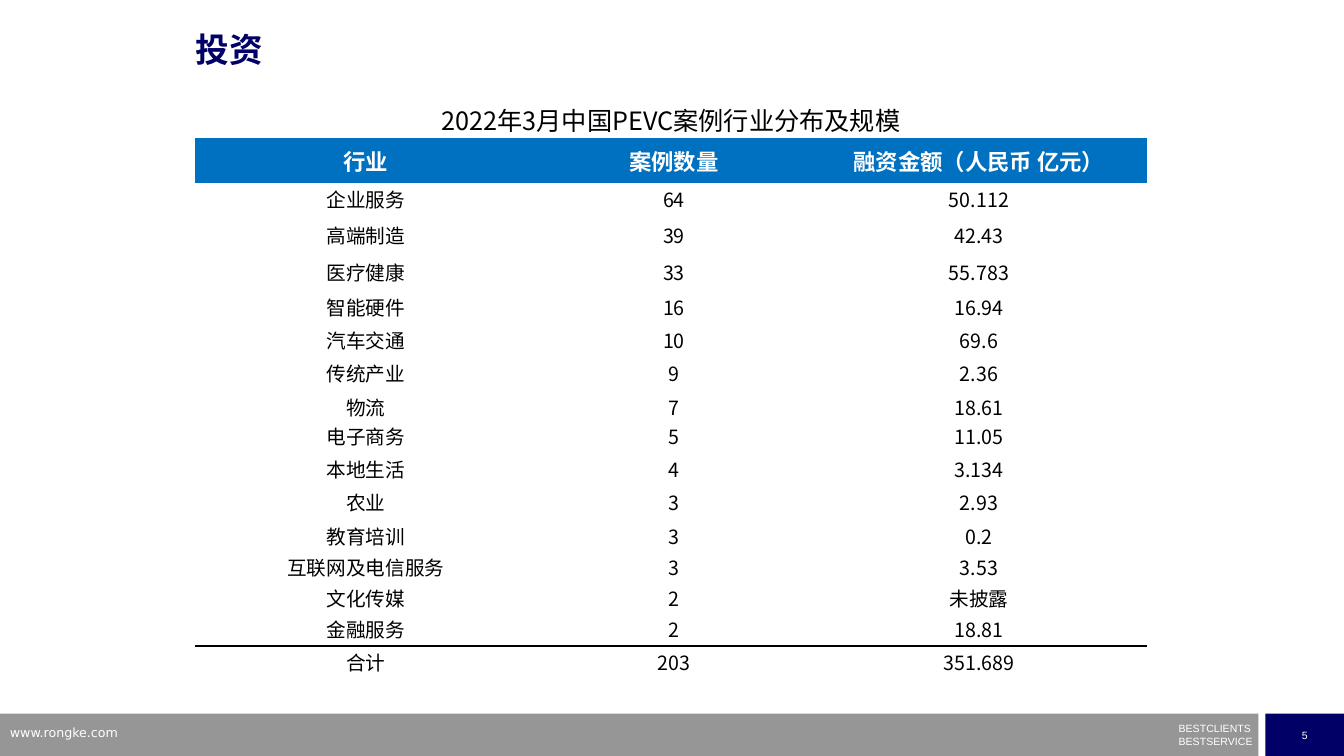
import pptx
import pptx.dml.color
import pptx.enum.shapes
import pptx.enum.text
import pptx.oxml
import pptx.oxml.ns
import pptx.util

Inches = pptx.util.Inches
Pt = pptx.util.Pt
Align = pptx.enum.text.PP_ALIGN
Anchor = pptx.enum.text.MSO_ANCHOR

ROWS = [
    ("企业服务", "64", "50.112"),
    ("高端制造", "39", "42.43"),
    ("医疗健康", "33", "55.783"),
    ("智能硬件", "16", "16.94"),
    ("汽车交通", "10", "69.6"),
    ("传统产业", "9", "2.36"),
    ("物流", "7", "18.61"),
    ("电子商务", "5", "11.05"),
    ("本地生活", "4", "3.134"),
    ("农业", "3", "2.93"),
    ("教育培训", "3", "0.2"),
    ("互联网及电信服务", "3", "3.53"),
    ("文化传媒", "2", "未披露"),
    ("金融服务", "2", "18.81"),
    ("合计", "203", "351.689"),
]
HEADS = ("行业", "案例数量", "融资金额（人民币 亿元）")
WIDTHS = (3.4, 2.71, 3.34)
HEIGHTS = [0.37, 0.45] + [0.36] * 3 + [0.33] * 3 + [0.29] + [0.33] * 3 + [0.31] * 5
LINE = 0.29


def color(text):
    return pptx.dml.color.RGBColor.from_string(text)


class Page:
    """Holds the style and the current slide, and draws each kind of element."""

    main = "Noto Sans CJK SC"
    navy, gray, blue = "000066", "969696", "0070C0"
    white, black = "FFFFFF", "000000"

    def __init__(self, deck):
        self.slide = deck.slides.add_slide(deck.slide_layouts[5])
        self.shapes = self.slide.shapes

    def fit(self, frame, text, size, tint, font, bold=False, align=Align.LEFT):
        frame.text = text
        for para in frame.paragraphs:
            para.alignment = align
            for run in para.runs:
                run.font.size = Pt(size)
                run.font.bold = bold
                run.font.name = font
                run.font.color.rgb = color(tint)
                latin = run._r.rPr.find(pptx.oxml.ns.qn("a:latin"))
                latin.addnext(pptx.oxml.parse_xml(
                    f'<a:ea {pptx.oxml.ns.nsdecls("a")} typeface="{font}"/>'))

    def inset(self, item, left=0, top=0, right=0, bottom=0):
        item.margin_left, item.margin_top = Inches(left), Inches(top)
        item.margin_right, item.margin_bottom = Inches(right), Inches(bottom)

    def title(self, text, box):
        shape = self.shapes.title
        shape.left, shape.top, shape.width, shape.height = map(Inches, box)
        frame = shape.text_frame
        self.fit(frame, text, 24, self.navy, self.main, True)
        self.inset(frame)
        frame.auto_size = pptx.enum.text.MSO_AUTO_SIZE.NONE
        frame.vertical_anchor = Anchor.BOTTOM
        frame.paragraphs[0].line_spacing = 0.9

    def bar(self, box, fill, text=""):
        shape = self.shapes.add_shape(
            pptx.enum.shapes.MSO_SHAPE.RECTANGLE, *map(Inches, box))
        shape.shadow.inherit = False
        shape.fill.solid()
        shape.fill.fore_color.rgb = color(fill)
        shape.line.fill.background()
        if text:
            frame = shape.text_frame
            self.fit(frame, text, 7.5, self.white, "Arial", align=Align.CENTER)
            frame.vertical_anchor = Anchor.MIDDLE
            frame.word_wrap = False

    def label(self, text, box, size, font):
        frame = self.shapes.add_textbox(*map(Inches, box)).text_frame
        frame.word_wrap = True
        self.fit(frame, text, size, self.white, font)
        return frame

    def motto(self, text, box):
        frame = self.label(text, box, 7.5, "Arial")
        self.inset(frame)
        for para in frame.paragraphs:
            para.line_spacing = 0.5
        for para in frame.paragraphs[1:]:
            para.space_before = Pt(4.3)

    def cell(self, cell, text, size, tint, fill=None, bold=False):
        self.fit(cell.text_frame, text, size, tint, self.main, bold, Align.CENTER)
        cell.vertical_anchor = Anchor.MIDDLE
        self.inset(cell)
        if fill:
            cell.fill.solid()
            cell.fill.fore_color.rgb = color(fill)
        else:
            cell.fill.background()

    def edge(self, cell, side):
        cell._tc.get_or_add_tcPr().insert(0, pptx.oxml.parse_xml(
            f'<a:ln{side} {pptx.oxml.ns.nsdecls("a")} w="12700"><a:solidFill>'
            f'<a:srgbClr val="{self.black}"/></a:solidFill></a:ln{side}>'))

    def table(self, head, box):
        table = self.shapes.add_table(
            len(HEIGHTS), len(WIDTHS), *map(Inches, box)).table
        table.first_row = table.horz_banding = False
        style = table._tbl.tblPr.find(pptx.oxml.ns.qn("a:tableStyleId"))
        style.text = "{2D5ABB26-0587-4C30-8999-92F81FD0307C}"
        for col, width in zip(table.columns, WIDTHS):
            col.width = Inches(width)
        for row, height in zip(table.rows, HEIGHTS):
            row.height = Inches(height)
        table.cell(0, 0).merge(table.cell(0, 2))
        self.cell(table.cell(0, 0), head, 18, self.black)
        for col, text in enumerate(HEADS):
            self.cell(table.cell(1, col), text, 16, self.white, self.blue, True)
        last = len(HEIGHTS) - 1
        for row, texts in enumerate(ROWS, 2):
            for col, text in enumerate(texts):
                cell = table.cell(row, col)
                self.cell(cell, text, 14, self.black, self.white)
                if row < last:
                    foot = min(0.05, HEIGHTS[row] - LINE)
                    self.inset(cell, 0.01, 0, 0.01, foot)
        for col in range(len(WIDTHS)):
            self.edge(table.cell(last - 1, col), "B")
            self.edge(table.cell(last, col), "T")


def main():
    deck = pptx.Presentation()
    deck.slide_width, deck.slide_height = Inches(13.33), Inches(7.5)
    page = Page(deck)
    page.bar((0, 7.08, 12.48, 0.42), page.gray)
    page.bar((12.55, 7.08, 0.78, 0.42), page.navy, "5")
    page.motto("BESTCLIENTS\nBESTSERVICE", (11.69, 7.22, 0.76, 0.2))
    page.label("www.rongke.com", (0, 7.14, 3.2, 0.26), 9, "DejaVu Sans")
    page.title("投资", (1.94, 0.3, 9, 0.39))
    page.table("2022年3月中国PEVC案例行业分布及规模", (1.93, 1, 9.45, 5.72))
    deck.save("out.pptx")


if __name__ == "__main__":
    main()
